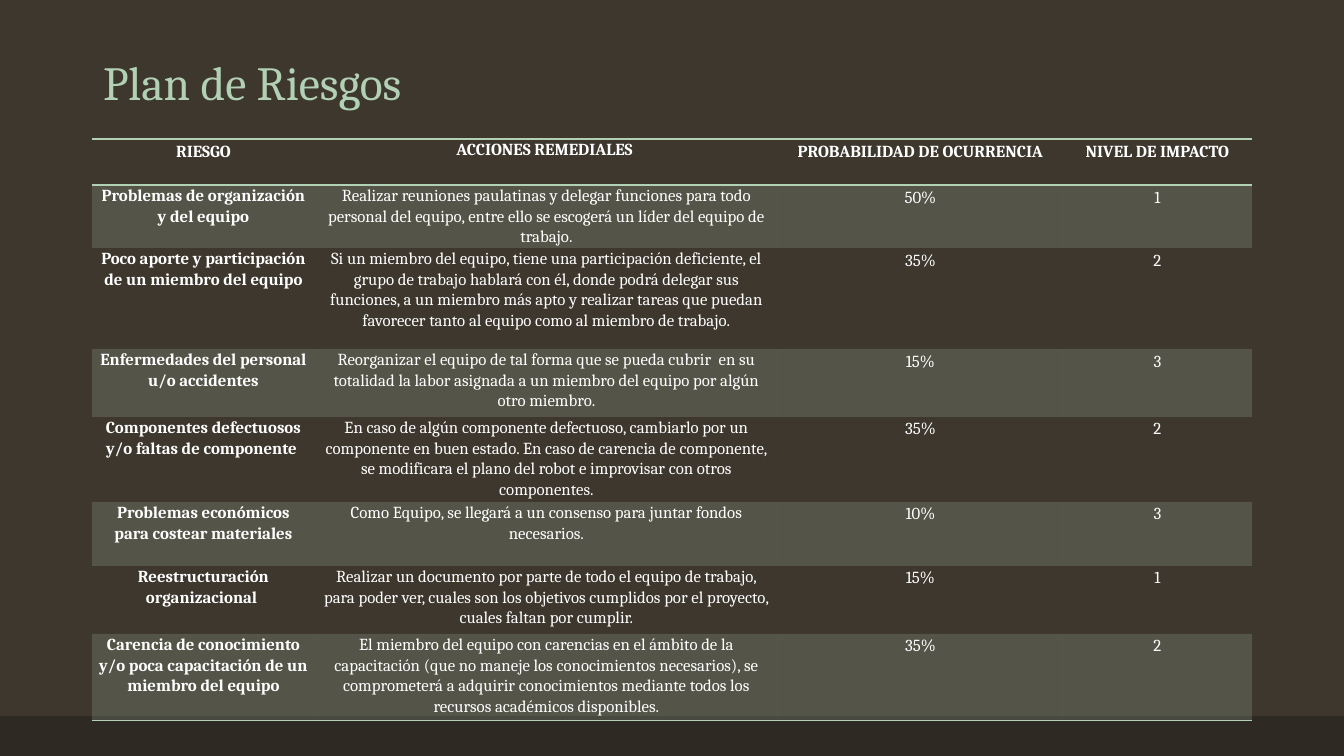
from lxml.etree import SubElement
from pptx import Presentation
from pptx.dml.color import RGBColor
from pptx.enum.shapes import MSO_SHAPE
from pptx.enum.text import MSO_ANCHOR, MSO_AUTO_SIZE, PP_ALIGN
from pptx.oxml.ns import qn
from pptx.util import Pt

PX = 914400 / 100.8
BROWN = RGBColor(0x3D, 0x37, 0x2E)
DARK_BROWN = RGBColor(0x2E, 0x29, 0x23)
MINT = RGBColor(0xB2, 0xD0, 0xB4)
WHITE = RGBColor(0xFF, 0xFF, 0xFF)
FONT = "Cambria"
NO_GRID_STYLE = "{2D5ABB26-0587-4C30-8999-92F81FD0307C}"

HEADINGS = ("RIESGO", "ACCIONES REMEDIALES ", "PROBABILIDAD DE OCURRENCIA", "NIVEL DE IMPACTO")
RISKS = [
    ("Problemas de organización y del equipo",
     "Realizar reuniones paulatinas y delegar funciones para todo personal del equipo, "
     "entre ello se escogerá un líder del equipo de trabajo.", "50%", "1"),
    ("Poco aporte y participación de un miembro del equipo",
     "Si un miembro del equipo, tiene una participación deficiente, el grupo de trabajo "
     "hablará con él, donde podrá delegar sus funciones, a un miembro más apto y realizar "
     "tareas que puedan favorecer tanto al equipo como al miembro de trabajo.", "35%", "2"),
    ("Enfermedades del personal u/o accidentes",
     "Reorganizar el equipo de tal forma que se pueda cubrir  en su totalidad la labor "
     "asignada a un miembro del equipo por algún otro miembro.", "15%", "3"),
    ("Componentes defectuosos y/o faltas de componente ",
     "En caso de algún componente defectuoso, cambiarlo por un componente en buen estado. "
     "En caso de carencia de componente, se modificara el plano del robot e improvisar con "
     "otros componentes.", "35%", "2"),
    ("Problemas económicos para costear materiales",
     "Como Equipo, se llegará a un consenso para juntar fondos necesarios.", "10%", "3"),
    ("Reestructuración organizacional ",
     "Realizar un documento por parte de todo el equipo de trabajo, para poder ver, cuales "
     "son los objetivos cumplidos por el proyecto, cuales faltan por cumplir.", "15%", "1"),
    ("Carencia de conocimiento y/o poca capacitación de un miembro del equipo",
     "El miembro del equipo con carencias en el ámbito de la capacitación (que no maneje los "
     "conocimientos necesarios), se comprometerá a adquirir conocimientos mediante todos los "
     "recursos académicos disponibles.", "35%", "2"),
]
COLUMN_WIDTHS = (223, 463, 285, 189)
ROW_HEIGHTS = (46, 63, 101, 68, 85, 64, 68, 87)


def px(*lengths):
    return [round(length * PX) for length in lengths]


def write(frame, text, size=12, color=WHITE, bold=False, align=PP_ALIGN.CENTER, spacing=1.07):
    para = frame.paragraphs[0]
    para.alignment = align
    para.line_spacing = spacing
    span = para.add_run()
    span.text = text
    span.font.name = FONT
    span.font.size = Pt(size)
    span.font.bold = bold
    span.font.color.rgb = color


# Page and background
deck = Presentation()
deck.slide_width, deck.slide_height = px(1344, 756)
page = deck.slides.add_slide(deck.slide_layouts[5])
page.background.fill.solid()
page.background.fill.fore_color.rgb = BROWN

# Footer band
band = page.shapes.add_shape(MSO_SHAPE.RECTANGLE, *px(0, 716, 1344, 40))
band.shadow.inherit = False
band.fill.solid()
band.fill.fore_color.rgb = DARK_BROWN
band.line.fill.background()

# Title
title = page.shapes.title
title.left, title.top, title.width, title.height = px(93, 40, 1159, 76)
title.text_frame.auto_size = MSO_AUTO_SIZE.NONE
title.text_frame.vertical_anchor = MSO_ANCHOR.BOTTOM
write(title.text_frame, "Plan de Riesgos", size=34, color=MINT, align=PP_ALIGN.LEFT, spacing=0.9)

# Table frame
rows = [HEADINGS, *RISKS]
frame = page.shapes.add_table(len(rows), len(HEADINGS),
                              *px(92, 139, sum(COLUMN_WIDTHS), sum(ROW_HEIGHTS)))
table = frame.table
table.horz_banding = False
table.first_row = False
next(frame._element.iter(qn("a:tableStyleId"))).text = NO_GRID_STYLE
for column, width in zip(table.columns, px(*COLUMN_WIDTHS)):
    column.width = width
for row, height in zip(table.rows, px(*ROW_HEIGHTS)):
    row.height = height

# Table cells
for row_index, texts in enumerate(rows):
    header = row_index == 0
    for column_index, text in enumerate(texts):
        cell = table.cell(row_index, column_index)
        cell.margin_left, cell.margin_right = px(7, 7)
        cell.margin_top = cell.margin_bottom = 0
        loose = column_index > 1 or (header and column_index == 0)
        write(cell.text_frame, text, bold=header or column_index == 0,
              spacing=1.15 if loose else 1.07)

        # Rules around the header and below the last row
        edges = ["a:lnT", "a:lnB"] if header else ["a:lnB"] if row_index == len(RISKS) else []
        properties = cell._tc.get_or_add_tcPr()
        for edge in edges:
            line = SubElement(properties, qn(edge), w=str(Pt(1)))
            SubElement(SubElement(line, qn("a:solidFill")), qn("a:srgbClr"), val=str(MINT))

        # Translucent fill on every other row
        if row_index % 2:
            cell.fill.solid()
            cell.fill.fore_color.rgb = MINT
            tint = next(properties.find(qn("a:solidFill")).iter(qn("a:srgbClr")))
            SubElement(tint, qn("a:alpha"), val="20000")
        else:
            cell.fill.background()

deck.save("out.pptx")
